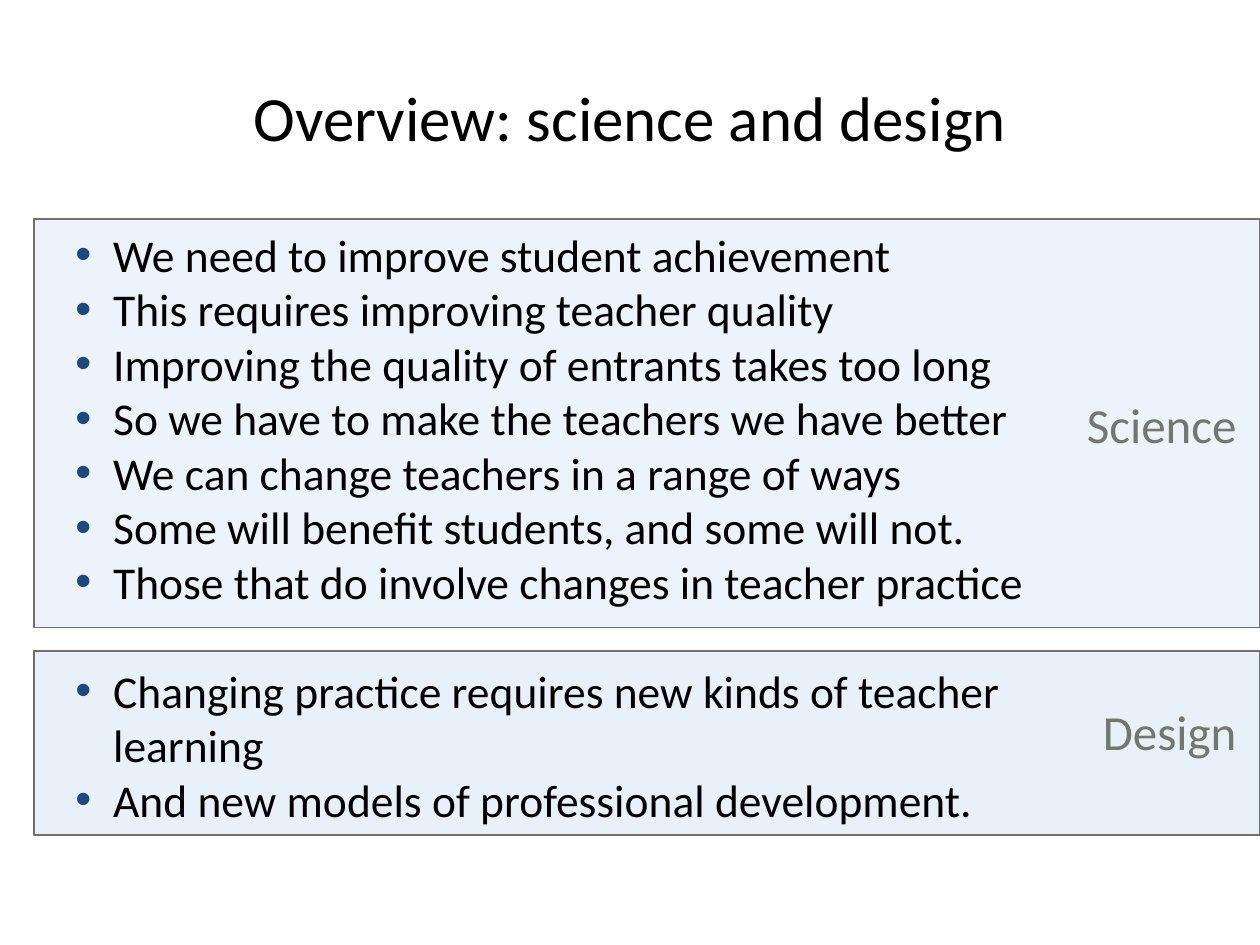
from pptx import Presentation
from pptx import util as u
from pptx.dml.color import RGBColor
from pptx.enum import shapes, text
from pptx.oxml import parse_xml
from pptx.oxml.ns import nsdecls

Pt = u.Pt
BLACK = RGBColor(0x00, 0x00, 0x00)
LABEL = RGBColor(0x73, 0x78, 0x6E)
BORDER = RGBColor(0x78, 0x6E, 0x69)
SCIENCE = RGBColor(0xEC, 0xF3, 0xFA)
DESIGN = RGBColor(0xE8, 0xF0, 0xF9)
BULLET = "1F497D"
LINE = 31.15  # line pitch of the list
INDENT = 21.6

POINTS = [
    ["We need to improve student achievement",
     "This requires improving teacher quality",
     "Improving the quality of entrants takes too long",
     "So we have to make the teachers we have better",
     "We can change teachers in a range of ways",
     "Some will benefit students, and some will not.",
     "Those that do involve changes in teacher practice"],
    ["Changing practice requires new kinds of teacher learning",
     "And new models of professional development."],
]


def set_all(obj, formats):
    for name, value in formats.items():
        setattr(obj, name, value)


def write(p, words, size, color, **formats):
    r = p.add_run()
    r.text = words
    set_all(r.font, {"name": "Calibri", "size": Pt(size)})
    r.font.color.rgb = color
    set_all(p, formats)


def add_box(s, box):
    tf = s.shapes.add_textbox(*map(Pt, box)).text_frame
    tf.word_wrap = True
    return tf


def add_title(s, box, words):
    tf = add_box(s, box)
    tf.vertical_anchor = text.MSO_ANCHOR.MIDDLE
    write(tf.paragraphs[0], words, 36, BLACK, alignment=text.PP_ALIGN.CENTER)


def add_panel(s, box, fill, words, label_top, label_height):
    x, y, w, h = box
    # Outlined band
    sp = s.shapes.add_shape(shapes.MSO_SHAPE.RECTANGLE, *map(Pt, box))
    sp.shadow.inherit = False
    sp.fill.solid()
    sp.fill.fore_color.rgb = fill
    sp.line.color.rgb = BORDER
    sp.line.width = Pt(1)
    # Label at the right end
    tf = add_box(s, (x + w - 132.4, y + label_top, 126, label_height))
    write(tf.paragraphs[0], words, 28, LABEL, alignment=text.PP_ALIGN.RIGHT)


def add_bullet(p):
    pPr = p._p.get_or_add_pPr()
    pPr.set("marL", str(Pt(INDENT)))
    pPr.set("indent", str(-Pt(INDENT)))
    for xml in (f'<a:buClr {nsdecls("a")}><a:srgbClr val="{BULLET}"/></a:buClr>',
                f'<a:buFont {nsdecls("a")} typeface="Arial"/>',
                f'<a:buChar {nsdecls("a")} char="•"/>'):
        pPr.append(parse_xml(xml))


def add_points(s, box, groups):
    tf = add_box(s, box)
    p = tf.paragraphs[0]
    for g, group in enumerate(groups):
        for i, words in enumerate(group):
            if g or i:
                p = tf.add_paragraph()
            # One free line between the groups
            before = LINE if g and not i else 0
            write(p, words, 26, BLACK, line_spacing=Pt(LINE),
                  space_before=Pt(before), space_after=Pt(0))
            add_bullet(p)


def main():
    prs = Presentation()
    set_all(prs, {"slide_width": Pt(720), "slide_height": Pt(540)})
    s = prs.slides.add_slide(prs.slide_layouts[6])
    add_title(s, (36, 21.6, 648, 90), "Overview: science and design")
    add_panel(s, (19.4, 372.2, 700.6, 105), DESIGN, "Design", 25.2, 54.7)
    add_panel(s, (19.4, 125.3, 700.6, 233.3), SCIENCE, "Science", 96.5, 39.6)
    add_points(s, (36, 126, 614.9, 356.4), POINTS)
    prs.save("out.pptx")


if __name__ == "__main__":
    main()
